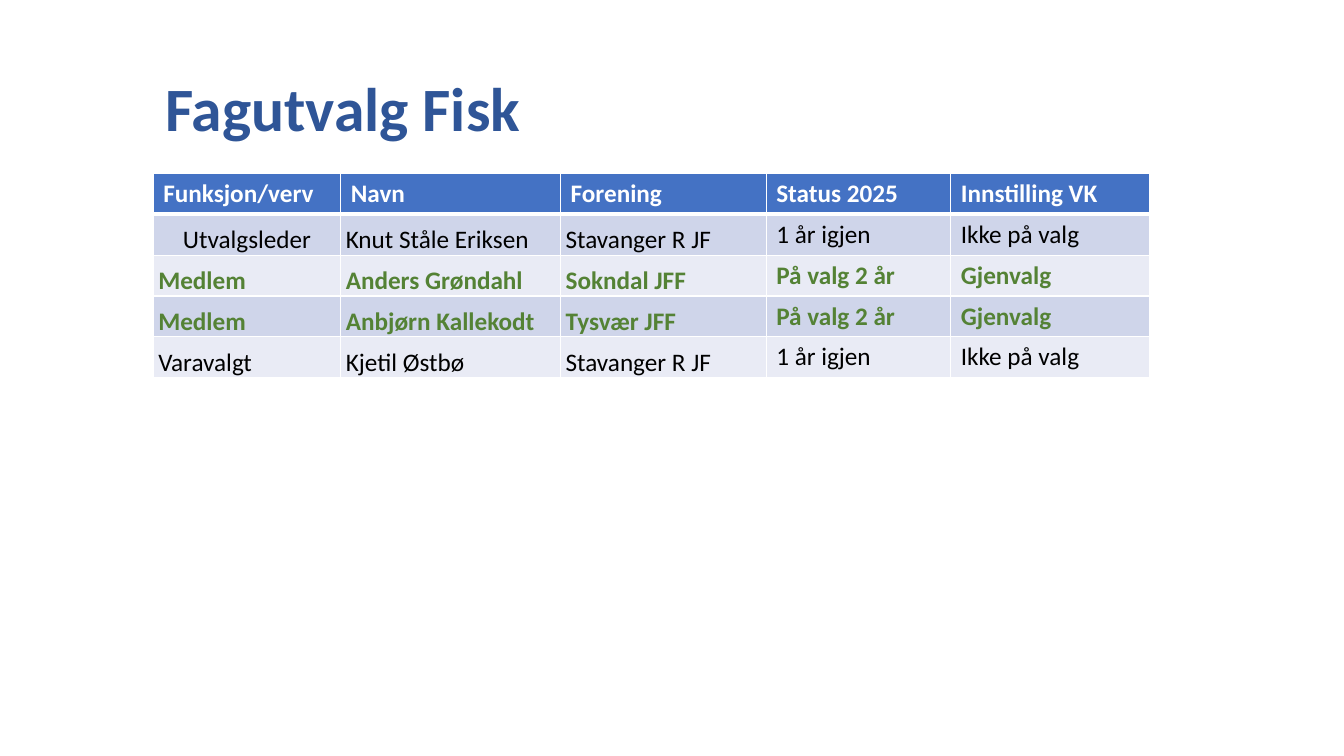
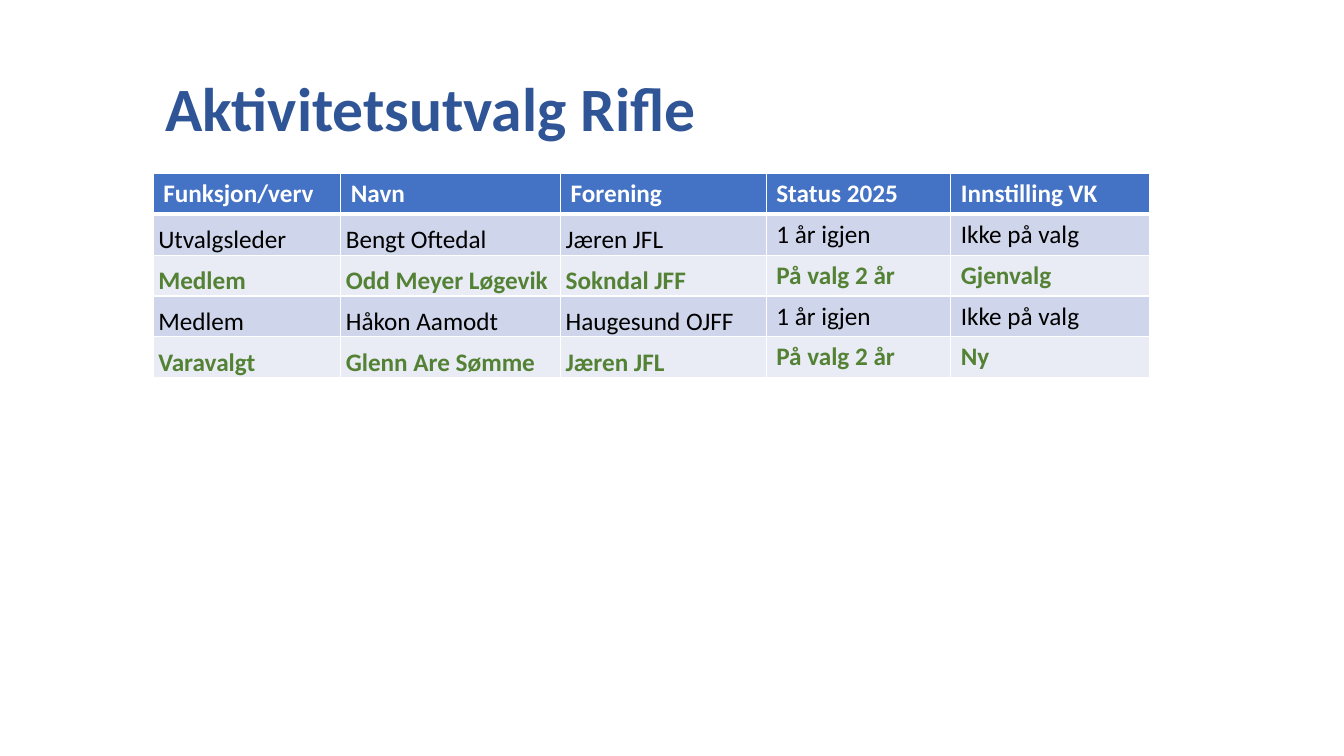
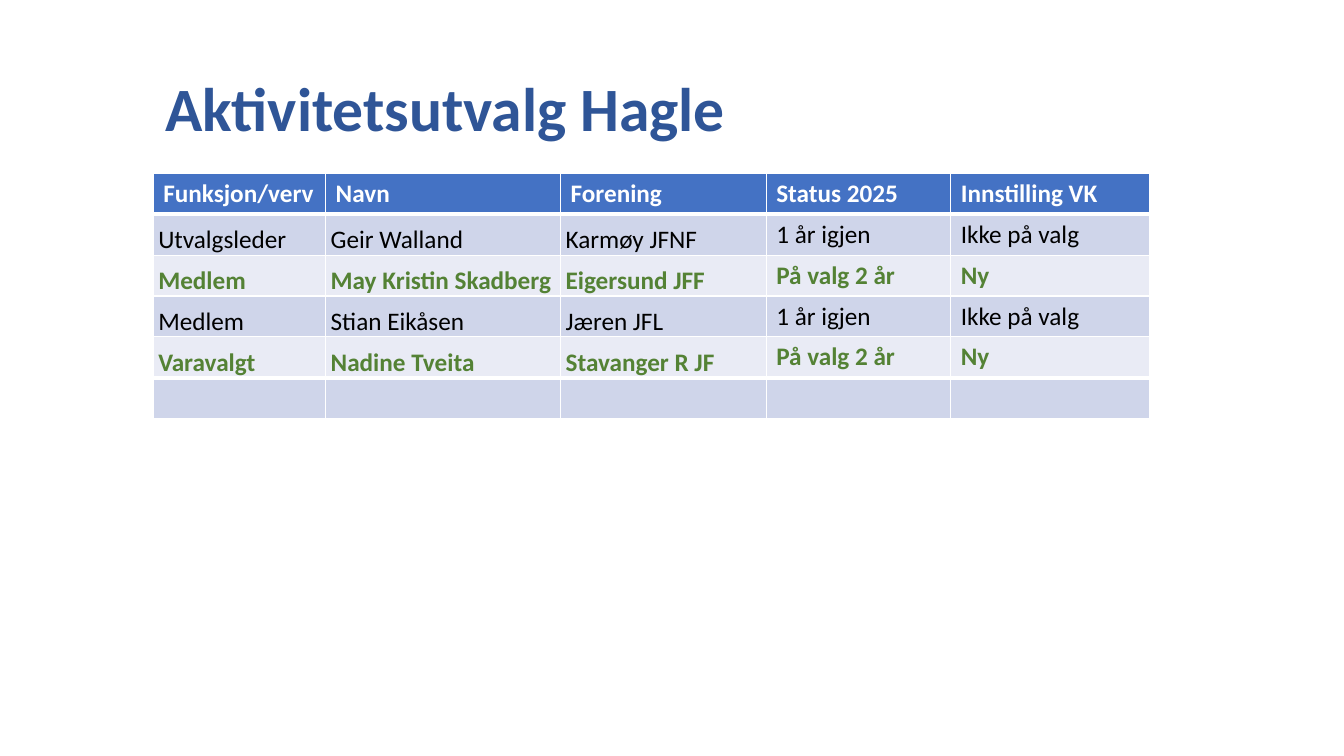
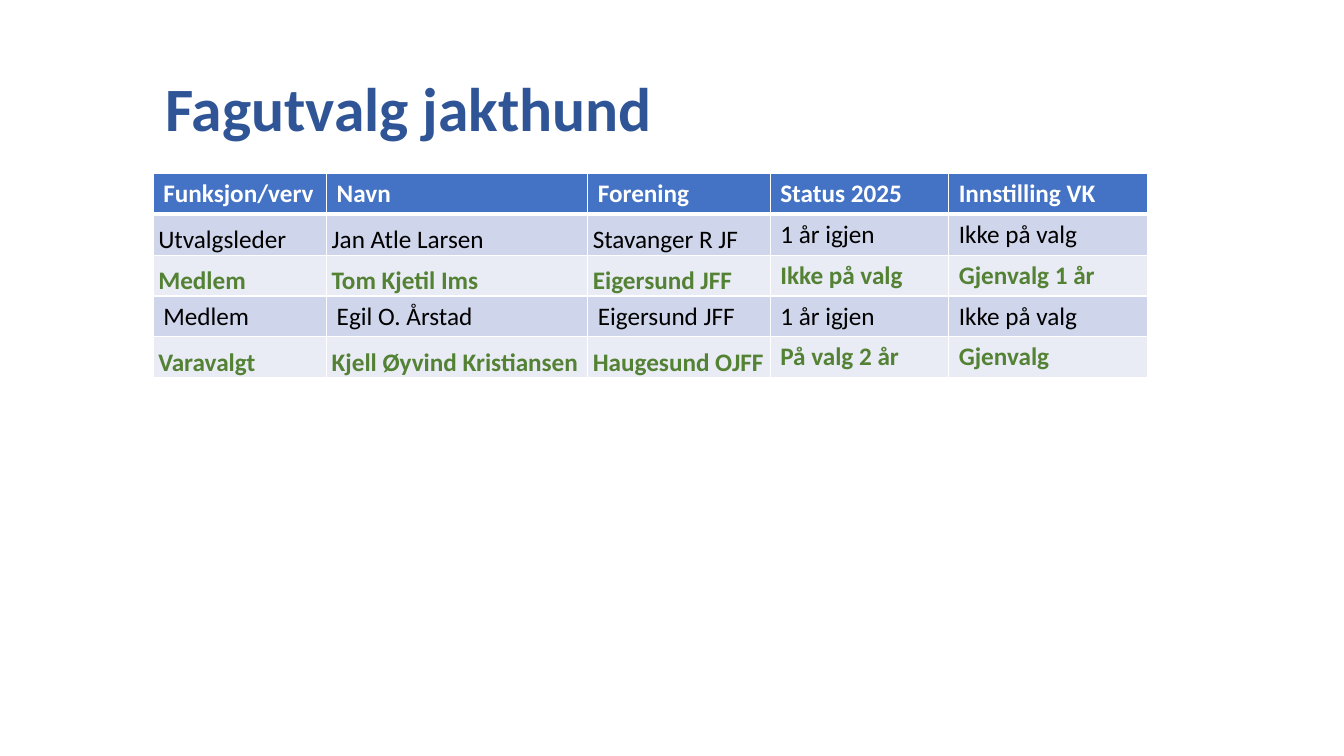
"""Builds four slides, each with a committee and its table of elected members."""
from lxml import etree
from pptx import Presentation, util as u
from pptx.dml.color import RGBColor
from pptx.enum import text
from pptx.oxml import ns

HUES = {"title": "2F5597", "head": "4472C4", "odd": "CFD5EA", "even": "E9EBF5",
        "white": "FFFFFF", "black": "000000", "green": "548235"}
FONT = "Calibri"
HEAD = ("Funksjon/verv", "Navn", "Forening", "Status 2025", "Innstilling VK")
OFF = "Ikke på valg"
STAY = ("1 år igjen", OFF)
BACK = ("På valg 2 år", "Gjenvalg")
NEW = ("På valg 2 år", "Ny")

SLIDES = [
    {"title": "Fagutvalg Fisk", "cols": (1.86, 2.18, 2.04, 1.83, 1.97),
     "center": [(1, 0)],
     "rows": [("Utvalgsleder", "Knut Ståle Eriksen", "Stavanger R JF", *STAY),
              ("Medlem", "Anders Grøndahl", "Sokndal JFF", *BACK),
              ("Medlem", "Anbjørn Kallekodt", "Tysvær JFF", *BACK),
              ("Varavalgt", "Kjetil Østbø", "Stavanger R JF", *STAY)]},
    {"title": "Aktivitetsutvalg Rifle", "cols": (1.86, 2.18, 2.04, 1.83, 1.97),
     "rows": [("Utvalgsleder", "Bengt Oftedal", "Jæren JFL", *STAY),
              ("Medlem", "Odd Meyer Løgevik", "Sokndal JFF", *BACK),
              ("Medlem", "Håkon Aamodt", "Haugesund OJFF", *STAY),
              ("Varavalgt", "Glenn Are Sømme", "Jæren JFL", *NEW)]},
    {"title": "Aktivitetsutvalg Hagle", "cols": (1.71, 2.33, 2.04, 1.83, 1.97),
     "rows": [("Utvalgsleder", "Geir Walland", "Karmøy JFNF", *STAY),
              ("Medlem", "May Kristin Skadberg", "Eigersund JFF", *NEW),
              ("Medlem", "Stian Eikåsen", "Jæren JFL", *STAY),
              ("Varavalgt", "Nadine Tveita", "Stavanger R JF", *NEW),
              ("",) * 5]},
    {"title": "Fagutvalg jakthund", "cols": (1.72, 2.59, 1.81, 1.77, 1.97),
     "top": [3],
     "rows": [("Utvalgsleder", "Jan Atle Larsen", "Stavanger R JF", *STAY),
              ("Medlem", "Tom Kjetil Ims", "Eigersund JFF", OFF, "Gjenvalg 1 år"),
              ("Medlem", "Egil O. Årstad", "Eigersund JFF", *STAY),
              ("Varavalgt", "Kjell Øyvind Kristiansen", "Haugesund OJFF", *BACK)]},
]


def write(para, words, size, hue, bold):
    run = para.add_run()
    run.text = words
    font = run.font
    font.name, font.size, font.bold = FONT, u.Pt(size), bold
    font.color.rgb = RGBColor.from_string(HUES[hue])


def add_title(slide, words):
    box = slide.shapes.title
    box.left, box.top, box.width, box.height = map(u.Inches, (1.54, 0.38, 9.85, 1.45))
    frame = box.text_frame
    frame.auto_size = text.MSO_AUTO_SIZE.NONE
    frame.vertical_anchor = text.MSO_ANCHOR.MIDDLE
    para = frame.paragraphs[0]
    para.alignment = text.PP_ALIGN.LEFT
    para.line_spacing = 0.9
    write(para, words, 44, "title", True)


def edge(cell, base):
    props = cell._tc.get_or_add_tcPr()
    for side, wide in (("L", 1), ("R", 1), ("T", 1), ("B", base)):
        line = etree.SubElement(props, ns.qn(f"a:ln{side}"), w=str(u.Pt(wide)))
        fill = etree.SubElement(line, ns.qn("a:solidFill"))
        etree.SubElement(fill, ns.qn("a:srgbClr"), val=HUES["white"])


def sink(cell):
    cell.vertical_anchor = text.MSO_ANCHOR.BOTTOM
    cell.margin_left = cell.margin_right = u.Inches(0.05)
    cell.margin_top = cell.margin_bottom = 0
    para = cell.text_frame.paragraphs[0]
    para.line_spacing, para.space_after = 1.05, u.Pt(8)


def add_table(slide, data):
    rows = [HEAD, *data["rows"]]
    high = u.Inches(2.43) // 6
    table = slide.shapes.add_table(
        len(rows), len(HEAD), u.Inches(1.52), u.Inches(1.72),
        u.Inches(sum(data["cols"])), high * len(rows)).table
    for col, wide in zip(table.columns, data["cols"]):
        col.width = u.Inches(wide)
    for r, row in enumerate(rows):
        first = r == 0
        chosen = not first and row[-1] != OFF
        back = "head" if first else "odd" if r % 2 else "even"
        hue = "white" if first else "green" if chosen else "black"
        for c, words in enumerate(row):
            cell = table.cell(r, c)
            edge(cell, 3 if first or (r + 1 < len(rows) and not rows[r + 1][0]) else 1)
            cell.fill.solid()
            cell.fill.fore_color.rgb = RGBColor.from_string(HUES[back])
            if not words:
                continue
            para = cell.text_frame.paragraphs[0]
            write(para, words, 18, hue, first or chosen)
            if not first and c < 3 and r not in data.get("top", []):
                sink(cell)
            if (r, c) in data.get("center", []):
                para.alignment = text.PP_ALIGN.CENTER


def main():
    deck = Presentation()
    deck.slide_width, deck.slide_height = u.Inches(13.33), u.Inches(7.5)
    for data in SLIDES:
        slide = deck.slides.add_slide(deck.slide_layouts[5])
        add_title(slide, data["title"])
        add_table(slide, data)
    deck.save("out.pptx")


if __name__ == "__main__":
    main()
